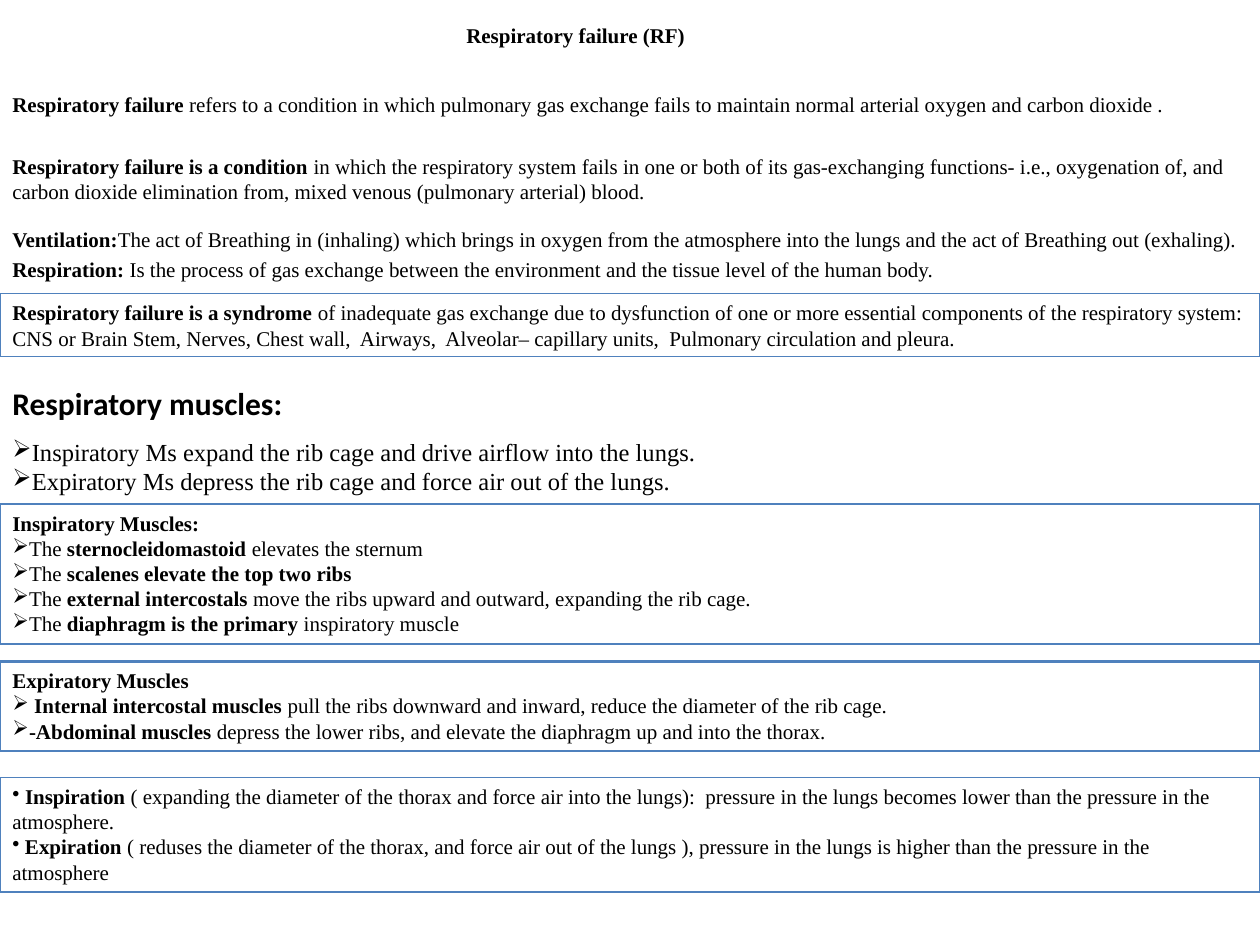
from dataclasses import dataclass

import pptx
import pptx.dml.color
import pptx.enum.shapes
import pptx.enum.text
import pptx.oxml
import pptx.oxml.ns
import pptx.util

Pt = pptx.util.Pt
SLIDE_WIDTH = 720
SLIDE_HEIGHT = 540
BLACK = "000000"
BLUE = "4F81BD"
SERIF = "Times New Roman"
ARROW = "➢"
DOT = "•"


@dataclass
class Line:
    text: str
    bullet: str = ""


@dataclass
class Block:
    top: float
    height: float
    lines: list[Line]
    border: float = 0
    size: float = 12
    font: str = SERIF
    space_before: float = 0


TITLE = Line("*Respiratory failure (RF) *")

BLOCKS = [
    Block(49, 21.6, [
        Line("*Respiratory failure *refers to a condition in which pulmonary gas exchange "
             "fails to maintain normal arterial oxygen and carbon dioxide ."),
    ]),
    Block(126, 59.8, [
        Line("*Ventilation:*The act of Breathing in (inhaling) which brings in oxygen from "
             "the atmosphere into the lungs and the act of Breathing out (exhaling)."),
        Line("*Respiration: *Is the process of gas exchange between the environment and "
             "the tissue level of the human body."),
    ], space_before=2.7),
    Block(84.2, 36, [
        Line("*Respiratory failure is a condition *in which the respiratory system fails in "
             "one or both of its gas-exchanging functions- i.e., oxygenation of, and carbon "
             "dioxide elimination from, mixed venous (pulmonary arterial) blood."),
    ]),
    Block(167.8, 36, [
        Line("*Respiratory failure is a syndrome *of inadequate gas exchange due to "
             "dysfunction of one or more essential components of the respiratory system: "
             "CNS or Brain Stem, Nerves, Chest wall,  Airways,  Alveolar– capillary units,  "
             "Pulmonary circulation and pleura."),
    ], border=0.75),
    Block(288, 79.9, [
        Line("*Inspiratory Muscles:*"),
        Line("The *sternocleidomastoid *elevates the sternum", ARROW),
        Line("The *scalenes elevate the top two ribs*", ARROW),
        Line("The *external intercostals *move the ribs upward and outward, "
             "expanding the rib cage.", ARROW),
        Line("The *diaphragm is the primary *inspiratory muscle", ARROW),
    ], border=1),
    Block(378, 51.1, [
        Line("*Expiratory Muscles*"),
        Line("* Internal intercostal muscles *pull the ribs downward and inward, "
             "reduce the diameter of the rib cage.", ARROW),
        Line("*-Abdominal muscles *depress the lower ribs, and elevate the diaphragm "
             "up and into the thorax.", ARROW),
    ], border=1.5),
    Block(216, 28.8, [Line("*Respiratory muscles:*")], size=18, font="Calibri"),
    Block(246.2, 41, [
        Line("Inspiratory Ms expand the rib cage and drive airflow into the lungs.", ARROW),
        Line("Expiratory Ms depress the rib cage and force air out of the lungs.", ARROW),
    ], size=14),
    Block(444.2, 65.5, [
        Line(" *Inspiration* ( expanding the diameter of the thorax and force air into the "
             "lungs):  pressure in the lungs becomes lower than the pressure in the "
             "atmosphere.", DOT),
        Line("* Expiration *( reduses the diameter of the thorax, and force air out of the "
             "lungs ), pressure in the lungs is higher than the pressure in the "
             "atmosphere", DOT),
    ], border=0.75),
]


def colour(value: str) -> pptx.dml.color.RGBColor:
    return pptx.dml.color.RGBColor.from_string(value)


def add_bullet(para, character: str) -> None:
    properties = para._p.get_or_add_pPr()
    properties.set("marL", "0")
    properties.set("indent", "0")
    bullet = pptx.oxml.parse_xml(f'<a:buChar {pptx.oxml.ns.nsdecls("a")} char="{character}"/>')
    properties.append(bullet)


def write_line(para, line: Line, size: float, font: str) -> None:
    for index, part in enumerate(line.text.split("*")):
        if part:
            span = para.add_run()
            span.text = part
            span.font.name = font
            span.font.size = Pt(size)
            span.font.bold = index % 2 == 1
            span.font.color.rgb = colour(BLACK)
    if line.bullet:
        add_bullet(para, line.bullet)


def prepare_frame(frame) -> None:
    frame.word_wrap = True
    frame.auto_size = pptx.enum.text.MSO_AUTO_SIZE.NONE
    frame.vertical_anchor = pptx.enum.text.MSO_ANCHOR.TOP


def add_title(page) -> None:
    title = page.shapes.title
    title.left, title.top = Pt(172.8), Pt(9.4)
    title.width, title.height = Pt(315.4), Pt(21.6)
    prepare_frame(title.text_frame)
    para = title.text_frame.paragraphs[0]
    para.alignment = pptx.enum.text.PP_ALIGN.CENTER
    write_line(para, TITLE, 12, SERIF)


def add_block(page, block: Block) -> None:
    bounds = (Pt(0), Pt(block.top), Pt(SLIDE_WIDTH), Pt(block.height))
    if block.border:
        box = page.shapes.add_shape(pptx.enum.shapes.MSO_SHAPE.RECTANGLE, *bounds)
        box.shadow.inherit = False
        box.fill.background()
        box.line.color.rgb = colour(BLUE)
        box.line.width = Pt(block.border)
    else:
        box = page.shapes.add_textbox(*bounds)
    frame = box.text_frame
    prepare_frame(frame)
    for index, line in enumerate(block.lines):
        para = frame.add_paragraph() if index else frame.paragraphs[0]
        para.alignment = pptx.enum.text.PP_ALIGN.LEFT
        para.space_before = Pt(block.space_before)
        write_line(para, line, block.size, block.font)


def main() -> None:
    deck = pptx.Presentation()
    deck.slide_width = Pt(SLIDE_WIDTH)
    deck.slide_height = Pt(SLIDE_HEIGHT)
    page = deck.slides.add_slide(deck.slide_layouts.get_by_name("Title Only"))
    add_title(page)
    for block in BLOCKS:
        add_block(page, block)
    deck.save("out.pptx")


if __name__ == "__main__":
    main()
